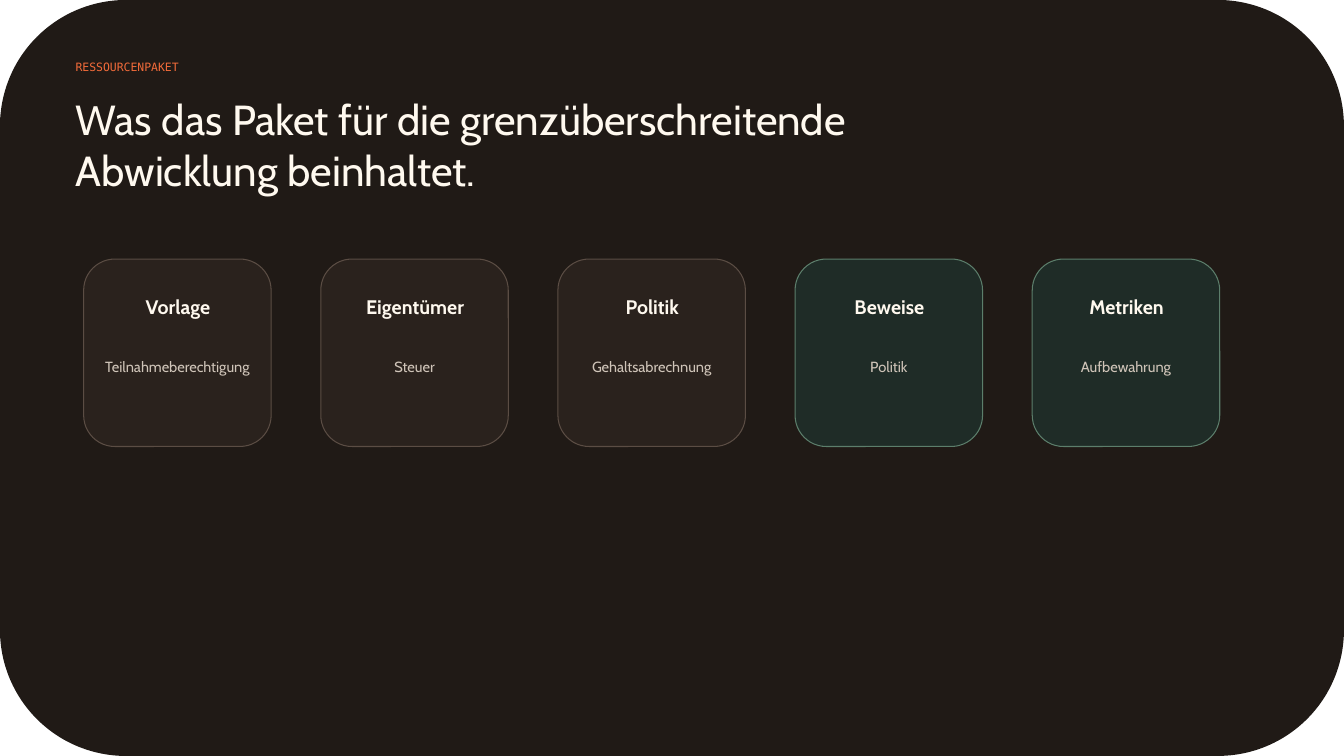
from pptx import Presentation
from pptx.dml.color import RGBColor
from pptx.enum.shapes import MSO_SHAPE
from pptx.enum.text import MSO_ANCHOR, MSO_AUTO_SIZE, PP_ALIGN
from pptx.util import Inches, Pt

ROUNDED = MSO_SHAPE.ROUNDED_RECTANGLE
TOP = MSO_ANCHOR.TOP
NO_AUTOFIT = MSO_AUTO_SIZE.NONE
LEFT, CENTER = PP_ALIGN.LEFT, PP_ALIGN.CENTER
TITLE_ONLY = 5

SANS, MONO = "Cabin", "DejaVu Sans Mono"
COLORS = {
    "backdrop": "201A16",
    "accent": "F26B3A",
    "cream": "FFF9EF",
    "muted": "CFC4B8",
    "brown": "2A221D",
    "brown_edge": "5B4D44",
    "green": "1F2C27",
    "green_edge": "5C7E6B",
}

SLIDE_W, SLIDE_H = 13.33, 7.5
CARD_LEFT, CARD_TOP, CARD_SIZE, CARD_PITCH = 0.83, 2.57, 1.86, 2.352
CARDS = [
    ("Vorlage", "Teilnahmeberechtigung", "brown"),
    ("Eigentümer", "Steuer", "brown"),
    ("Politik", "Gehaltsabrechnung", "brown"),
    ("Beweise", "Politik", "green"),
    ("Metriken", "Aufbewahrung", "green"),
]


def rgb(name):
    return RGBColor.from_string(COLORS[name])


def format_text(frame, text, size, color, font=SANS, bold=False, align=LEFT):
    frame.margin_left = frame.margin_right = 0
    frame.margin_top = frame.margin_bottom = 0
    frame.word_wrap = True
    frame.auto_size = NO_AUTOFIT
    frame.vertical_anchor = TOP
    frame.text = text
    paragraph = frame.paragraphs[0]
    paragraph.alignment = align
    run_font = paragraph.runs[0].font
    run_font.name = font
    run_font.size = Pt(size)
    run_font.bold = bold
    run_font.color.rgb = rgb(color)


def add_label(slide, left, top, width, height, text, size, color, **style):
    label = slide.shapes.add_textbox(
        Inches(left), Inches(top), Inches(width), Inches(height))
    format_text(label.text_frame, text, size, color, **style)


def add_panel(slide, left, top, width, height, fill, edge=None):
    panel = slide.shapes.add_shape(
        ROUNDED, Inches(left), Inches(top), Inches(width), Inches(height))
    panel.shadow.inherit = False
    panel.fill.solid()
    panel.fill.fore_color.rgb = rgb(fill)
    if edge:
        panel.line.color.rgb = rgb(edge)
        panel.line.width = Pt(0.75)
    else:
        panel.line.fill.background()
    return panel


def place_title(slide, left, top, width, height, text):
    title = slide.shapes.title
    title.left, title.top = Inches(left), Inches(top)
    title.width, title.height = Inches(width), Inches(height)
    format_text(title.text_frame, text, 30, "cream")
    return title


def add_card(slide, left, heading, detail, tone):
    add_panel(slide, left, CARD_TOP, CARD_SIZE, CARD_SIZE, tone, f"{tone}_edge")
    add_label(slide, left + 0.19, CARD_TOP + 0.36, 1.49, 0.33,
              heading, 14, "cream", bold=True, align=CENTER)
    add_label(slide, left + 0.155, CARD_TOP + 0.98, 1.55, 0.57,
              detail, 10.5, "muted", align=CENTER)


def main():
    prs = Presentation()
    prs.slide_width, prs.slide_height = Inches(SLIDE_W), Inches(SLIDE_H)
    slide = prs.slides.add_slide(prs.slide_layouts[TITLE_ONLY])

    # Backdrop, kept behind the title
    backdrop = add_panel(slide, 0, 0, SLIDE_W, SLIDE_H, "backdrop")
    slide.shapes.title.element.addprevious(backdrop.element)

    # Heading
    add_label(slide, 0.75, 0.6, 4.59, 0.28, "RESSOURCENPAKET", 8.2, "accent",
              font=MONO)
    place_title(slide, 0.75, 0.93, 8.31, 0.71,
                "Was das Paket für die grenzüberschreitende "
                "Abwicklung beinhaltet.")

    # Row of cards
    for index, (heading, detail, tone) in enumerate(CARDS):
        add_card(slide, CARD_LEFT + index * CARD_PITCH, heading, detail, tone)

    prs.save("out.pptx")


if __name__ == "__main__":
    main()
